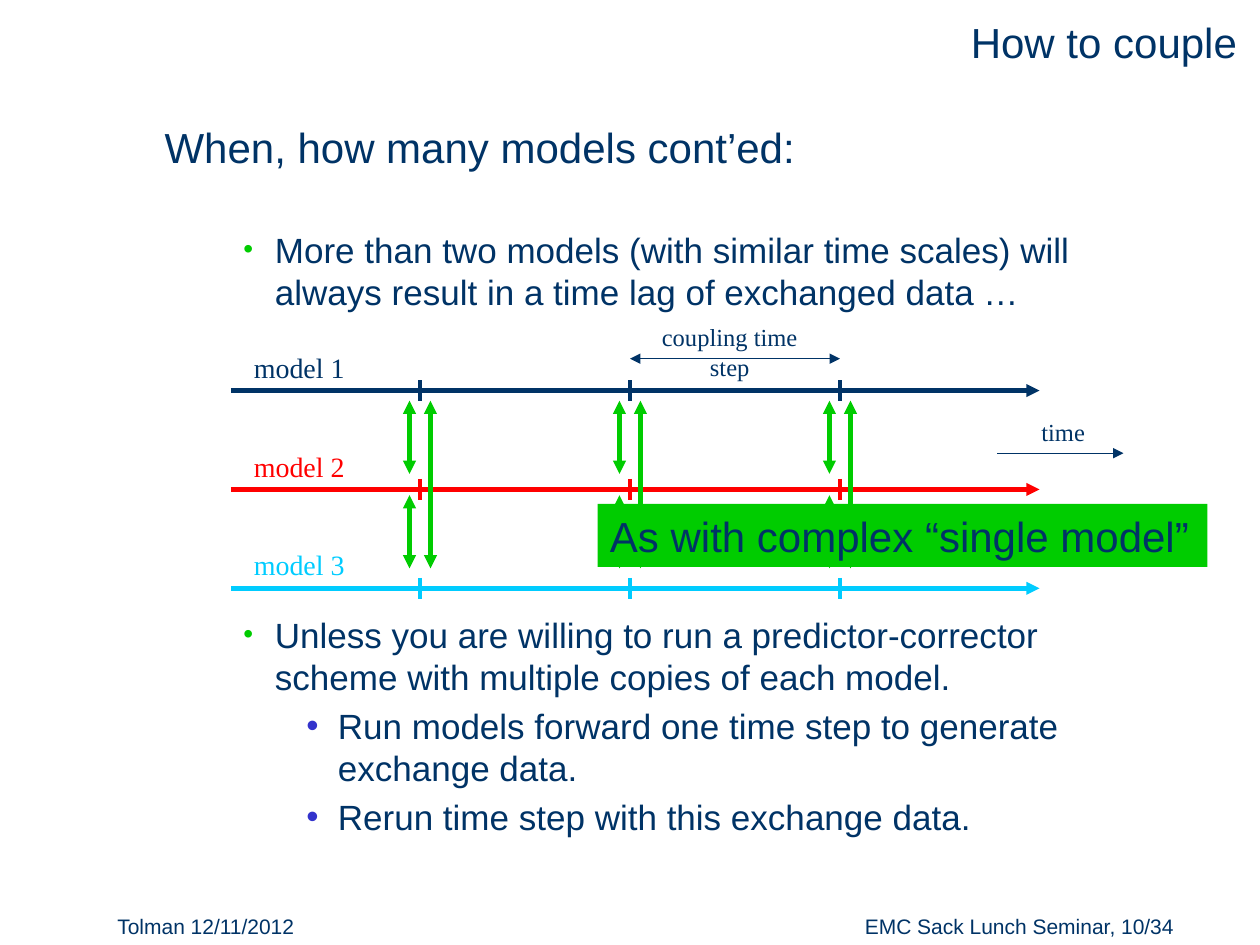
from lxml.etree import SubElement
from pptx import Presentation
from pptx.dml.color import RGBColor
from pptx.enum.shapes import MSO_CONNECTOR, MSO_SHAPE
from pptx.enum.text import MSO_ANCHOR, PP_ALIGN
from pptx.oxml.ns import qn
from pptx.util import Pt

COLORS = {
    "navy": "003366",
    "red": "FF0000",
    "cyan": "00CCFF",
    "green": "00CC00",
    "blue": "3333CC",
}
SANS, SERIF = "Arial", "Times New Roman"

# Timeline grid
LANE_COLORS = ["navy", "red", "cyan"]
LANE_TOP, LANE_GAP = 223.2, 56.5
LANE_LEFT, LANE_RIGHT = 132, 594
COUPLING_TIMES = [240, 360, 480]
TICK = 6
EXCHANGE_TOP, EXCHANGE_GAP, EXCHANGE_LENGTH = 229, 54, 41.75


def rgb(name):
    return RGBColor.from_string(COLORS[name])


def style(para, size, face=SANS, color="navy", align=PP_ALIGN.LEFT):
    para.alignment = align
    para.line_spacing = Pt(size * 1.2)
    para.font.size = Pt(size)
    para.font.name = face
    para.font.color.rgb = rgb(color)


def add_box(page, left, top, width, height):
    box = page.shapes.add_textbox(Pt(left), Pt(top), Pt(width), Pt(height))
    box.text_frame.word_wrap = True
    return box.text_frame


def add_label(page, text, left, top, width, height, size, **look):
    para = add_box(page, left, top, width, height).paragraphs[0]
    para.text = text
    style(para, size, **look)


def add_bullets(page, top, height, items):
    """Each item is (text, left margin, bullet colour, bullet size in percent)."""
    frame = add_box(page, 60, top, 606, height)
    for index, (text, margin, color, percent) in enumerate(items):
        para = frame.add_paragraph() if index else frame.paragraphs[0]
        para.text = text
        if index:
            para.space_before = Pt(4)
        props = para._p.get_or_add_pPr()
        props.set("marL", str(Pt(margin)))
        props.set("indent", str(Pt(-18)))
        bullet_color = SubElement(props, qn("a:buClr"))
        SubElement(bullet_color, qn("a:srgbClr"), val=COLORS[color])
        SubElement(props, qn("a:buSzPct"), val=str(percent * 1000))
        SubElement(props, qn("a:buFont"), typeface=SANS)
        SubElement(props, qn("a:buChar"), char="•")
        style(para, 20)


def add_line(page, start, end, color, width=2.5, heads=()):
    """heads holds headEnd (at start) and/or tailEnd (at end)."""
    line = page.shapes.add_connector(
        MSO_CONNECTOR.STRAIGHT, *(Pt(value) for value in (*start, *end)))
    line.line.color.rgb = rgb(color)
    line.line.width = Pt(width)
    for head in heads:
        SubElement(line.line._get_or_add_ln(), qn(f"a:{head}"), type="triangle")
    SubElement(line._element.spPr, qn("a:effectLst"))


def add_lane(page, number, color):
    y = LANE_TOP + (number - 1) * LANE_GAP
    add_line(page, (LANE_LEFT, y), (LANE_RIGHT, y), color, heads=["tailEnd"])
    add_label(page, f"model {number}", 138, y - 26.6, 96, 26.5, 16,
              face=SERIF, color=color)
    for x in COUPLING_TIMES:
        add_line(page, (x, y - TICK), (x, y + TICK), color)


def add_exchanges(page, x):
    both = ["headEnd", "tailEnd"]
    lower = EXCHANGE_TOP + EXCHANGE_GAP
    bottom = lower + EXCHANGE_LENGTH
    for top in (EXCHANGE_TOP, lower):
        add_line(page, (x - TICK, top), (x - TICK, top + EXCHANGE_LENGTH),
                 "green", heads=both)
    add_line(page, (x + TICK, EXCHANGE_TOP), (x + TICK, bottom),
             "green", heads=both)


def add_callout(page, text):
    box = page.shapes.add_shape(
        MSO_SHAPE.RECTANGLE, Pt(341.5), Pt(288), Pt(348.5), Pt(36))
    box.shadow.inherit = False
    box.fill.solid()
    box.fill.fore_color.rgb = rgb("green")
    box.line.fill.background()
    box.text_frame.word_wrap = False
    box.text_frame.vertical_anchor = MSO_ANCHOR.MIDDLE
    para = box.text_frame.paragraphs[0]
    para.text = text
    style(para, 24)


def set_title(page, text):
    title = page.shapes.title
    title.left, title.top, title.width, title.height = (
        Pt(294), Pt(6), Pt(420), Pt(36))
    title.text_frame.vertical_anchor = MSO_ANCHOR.MIDDLE
    para = title.text_frame.paragraphs[0]
    para.text = text
    style(para, 24, align=PP_ALIGN.RIGHT)


def main():
    deck = Presentation()
    deck.slide_width, deck.slide_height = Pt(720), Pt(540)
    page = deck.slides.add_slide(deck.slide_layouts[5])

    # Footer, title and heading
    add_label(page, "Tolman 12/11/2012", 60, 518.4, 216, 21.6, 12)
    add_label(page, "EMC Sack Lunch Seminar, 10/34", 438, 518.4, 240, 21.6, 12,
              align=PP_ALIGN.RIGHT)
    set_title(page, "How to couple")
    add_label(page, "When, how many models cont’ed:", 87, 66, 579, 36, 24)

    # Bullets above and below the timelines
    add_bullets(page, 127, 56, [
        ("More than two models (with similar time scales) will always result "
         "in a time lag of exchanged data …", 90, "green", 80)])
    add_bullets(page, 347, 136, [
        ("Unless you are willing to run a predictor-corrector scheme with "
         "multiple copies of each model.", 90, "green", 80),
        ("Run models forward one time step to generate exchange data.",
         126, "blue", 100),
        ("Rerun time step with this exchange data.", 126, "blue", 100)])

    # Time direction and coupling step
    add_line(page, (570, 259), (642, 259), "navy", 0.75, ["tailEnd"])
    add_label(page, "time", 588, 234.7, 48, 24, 14, face=SERIF)
    add_line(page, (360, 205), (480, 205), "navy", 0.75, ["headEnd", "tailEnd"])
    add_label(page, "coupling time step", 360, 180.7, 114, 41, 14,
              face=SERIF, align=PP_ALIGN.CENTER)

    # Model timelines and their data exchange
    for number, color in enumerate(LANE_COLORS, start=1):
        add_lane(page, number, color)
    for x in COUPLING_TIMES:
        add_exchanges(page, x)

    add_callout(page, "As with complex “single model”")
    deck.save("out.pptx")


if __name__ == "__main__":
    main()
